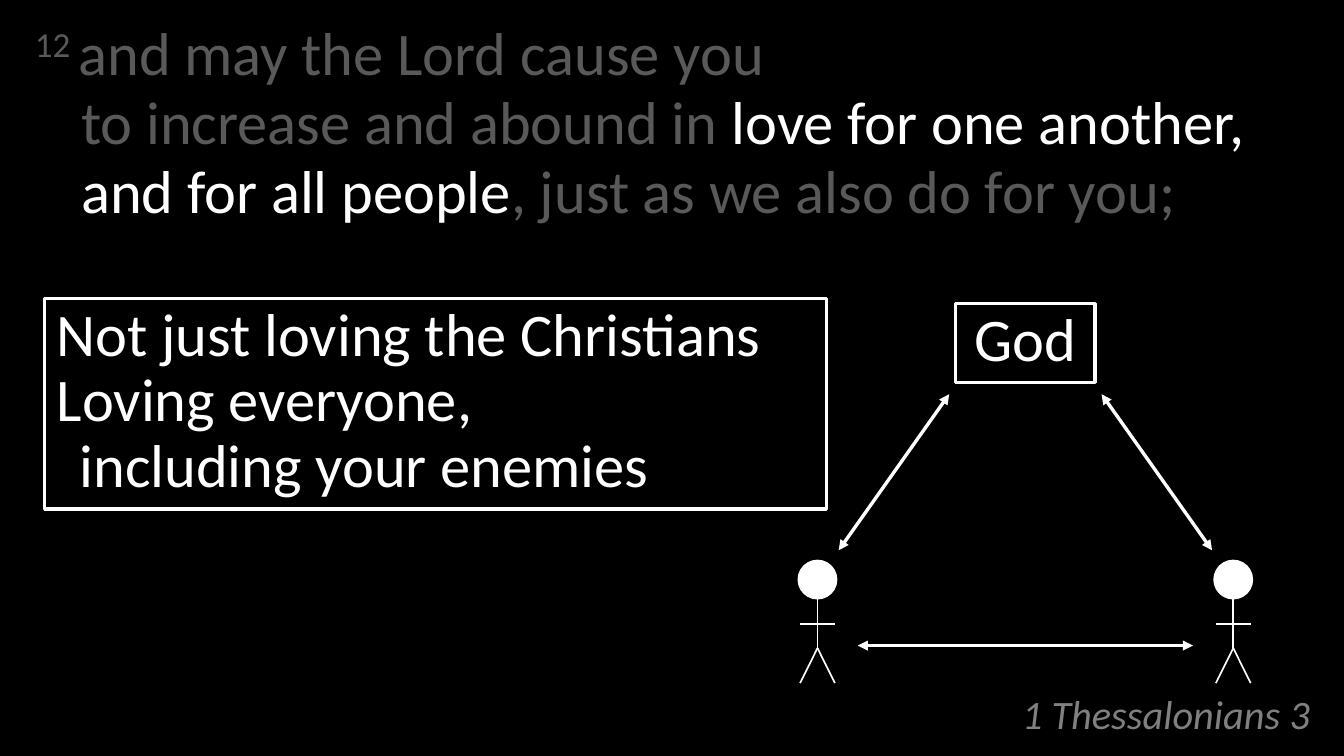
import pptx
import pptx.util
import pptx.dml.color
import pptx.enum.shapes
import pptx.enum.text
import pptx.oxml
import pptx.oxml.ns
from pptx.util import Cm, Pt

COLORS = {"black": "000000", "white": "FFFFFF", "dim": "595959", "gray": "808080"}
FONT = "Calibri"
SHAPES = pptx.enum.shapes.MSO_SHAPE
ALIGN = pptx.enum.text.PP_ALIGN
ANCHOR = pptx.enum.text.MSO_ANCHOR
AUTO_SIZE = pptx.enum.text.MSO_AUTO_SIZE


def rgb(name):
    return pptx.dml.color.RGBColor.from_string(COLORS[name])


def sub_element(parent, tag, **attrs):
    el = pptx.oxml.parse_xml(f"<a:{tag} {pptx.oxml.ns.nsdecls('a')}/>")
    for key, value in attrs.items():
        el.set(key, value)
    parent.append(el)


def place(sp, x, y, w, h):
    sp.left, sp.top, sp.width, sp.height = Cm(x), Cm(y), Cm(w), Cm(h)


def style_font(font, size, color):
    font.name, font.size = FONT, Pt(size)
    font.color.rgb = rgb(color)


def hang(p, indent):
    """Give the paragraph a hanging indent."""
    pPr = p._p.get_or_add_pPr()
    pPr.set("marL", str(Cm(indent)))
    pPr.set("indent", str(-Cm(indent)))


def add_lines(p, text):
    """Add text whose newlines are line breaks, and return its runs."""
    runs = []
    for i, line in enumerate(text.split("\n")):
        if i:
            p.add_line_break()
        r = p.add_run()
        r.text = line
        runs.append(r)
    return runs


def add_reference(slide, x, y, w, h):
    sp = slide.shapes.title
    place(sp, x, y, w, h)
    tf = sp.text_frame
    tf.text = "1 Thessalonians 3"
    tf.auto_size = AUTO_SIZE.NONE
    tf.vertical_anchor = ANCHOR.BOTTOM
    p = tf.paragraphs[0]
    p.alignment, p.line_spacing = ALIGN.RIGHT, 0.8
    style_font(p.font, 24, "gray")
    p.font.italic = True


def add_verse(slide, x, y, w, h):
    sp = slide.placeholders[1]
    place(sp, x, y, w, h)
    tf = sp.text_frame
    tf.auto_size = AUTO_SIZE.NONE
    p = tf.paragraphs[0]
    p.line_spacing = 0.95
    hang(p, 0.97)
    sub_element(p._p.get_or_add_pPr(), "buNone")
    parts = [
        ("12 ", "dim"),
        ("and may the Lord cause you \nto increase and abound in ", "dim"),
        ("love for one another, \nand for all people", "white"),
        (", just as we also do for you;", "dim"),
    ]
    for text, color in parts:
        for r in add_lines(p, text):
            style_font(r.font, 36, color)
    p.runs[0]._r.get_or_add_rPr().set("baseline", "30000")


def add_box(slide, x, y, w, h, lines, align=ALIGN.LEFT):
    sp = slide.shapes.add_shape(SHAPES.ROUNDED_RECTANGLE, Cm(x), Cm(y), Cm(w), Cm(h))
    sp.adjustments[0] = 0
    sp.shadow.inherit = False
    sp.fill.solid()
    sp.fill.fore_color.rgb = rgb("black")
    sp.line.color.rgb = rgb("white")
    sp.line.width = Pt(2)
    tf = sp.text_frame
    tf.word_wrap = True
    tf.auto_size = AUTO_SIZE.SHAPE_TO_FIT_TEXT
    tf.vertical_anchor = ANCHOR.TOP
    for i, text in enumerate(lines):
        p = tf.add_paragraph() if i else tf.paragraphs[0]
        p.alignment, p.line_spacing = align, 0.9
        hang(p, 0.48)
        for r in add_lines(p, text):
            style_font(r.font, 36, "white")


def add_line(slide, x1, y1, x2, y2, width=1, arrows=False):
    cx = slide.shapes.add_connector(
        pptx.enum.shapes.MSO_CONNECTOR.STRAIGHT, Cm(x1), Cm(y1), Cm(x2), Cm(y2))
    cx.line.color.rgb = rgb("white")
    cx.line.width = Pt(width)
    if arrows:
        ln = cx.line._get_or_add_ln()
        for end in ("headEnd", "tailEnd"):
            sub_element(ln, end, type="triangle")
    sub_element(cx._element.spPr, "effectLst")


def add_stick_figure(slide, x, y, w, h):
    mid, neck, arms, hip = x + w / 2, y + w, y + 0.51 * h, y + 0.71 * h
    head = slide.shapes.add_shape(SHAPES.OVAL, Cm(x), Cm(y), Cm(w), Cm(w))
    head.shadow.inherit = False
    head.fill.solid()
    head.fill.fore_color.rgb = rgb("white")
    head.line.color.rgb = rgb("white")
    head.line.width = Pt(3)
    add_line(slide, mid, neck, mid, hip)
    add_line(slide, x, arms, x + w, arms)
    for foot in (x, x + w):
        add_line(slide, mid, hip, foot, y + h)


def add_love_triangle(slide, x, y, w, h):
    """God at the top and two people below, joined by arrows."""
    mid = x + w / 2
    box_w, box_h, person_w, person_h = 2.92, 1.65, 0.73, 2.54
    person_y = y + h - person_h
    add_box(slide, mid - box_w / 2, y, box_w, box_h, ["God"], ALIGN.CENTER)
    for side, person_x in ((-1, x), (1, x + w - person_w)):
        add_line(slide, mid + side * 1.6, y + box_h + 0.25,
                 mid + side * 3.92, person_y - 0.25, 2, True)
        add_stick_figure(slide, person_x, person_y, person_w, person_h)
    add_line(slide, mid - 3.52, y + h - 0.79, mid + 3.52, y + h - 0.79, 2, True)


def main():
    prs = pptx.Presentation()
    prs.slide_width, prs.slide_height = Cm(28.22), Cm(15.88)
    slide = prs.slides.add_slide(prs.slide_layouts[1])
    slide.background.fill.solid()
    slide.background.fill.fore_color.rgb = rgb("black")
    add_reference(slide, 17.93, 14.12, 9.83, 1.5)
    add_verse(slide, 0.48, 0.3, 27.28, 13.44)
    add_love_triangle(slide, 16.8, 6.38, 9.46, 7.97)
    add_box(slide, 0.94, 6.27, 16.41, 4.42, [
        "Not just loving the Christians",
        "Loving everyone, \nincluding your enemies",
    ])
    prs.save("out.pptx")


if __name__ == "__main__":
    main()
